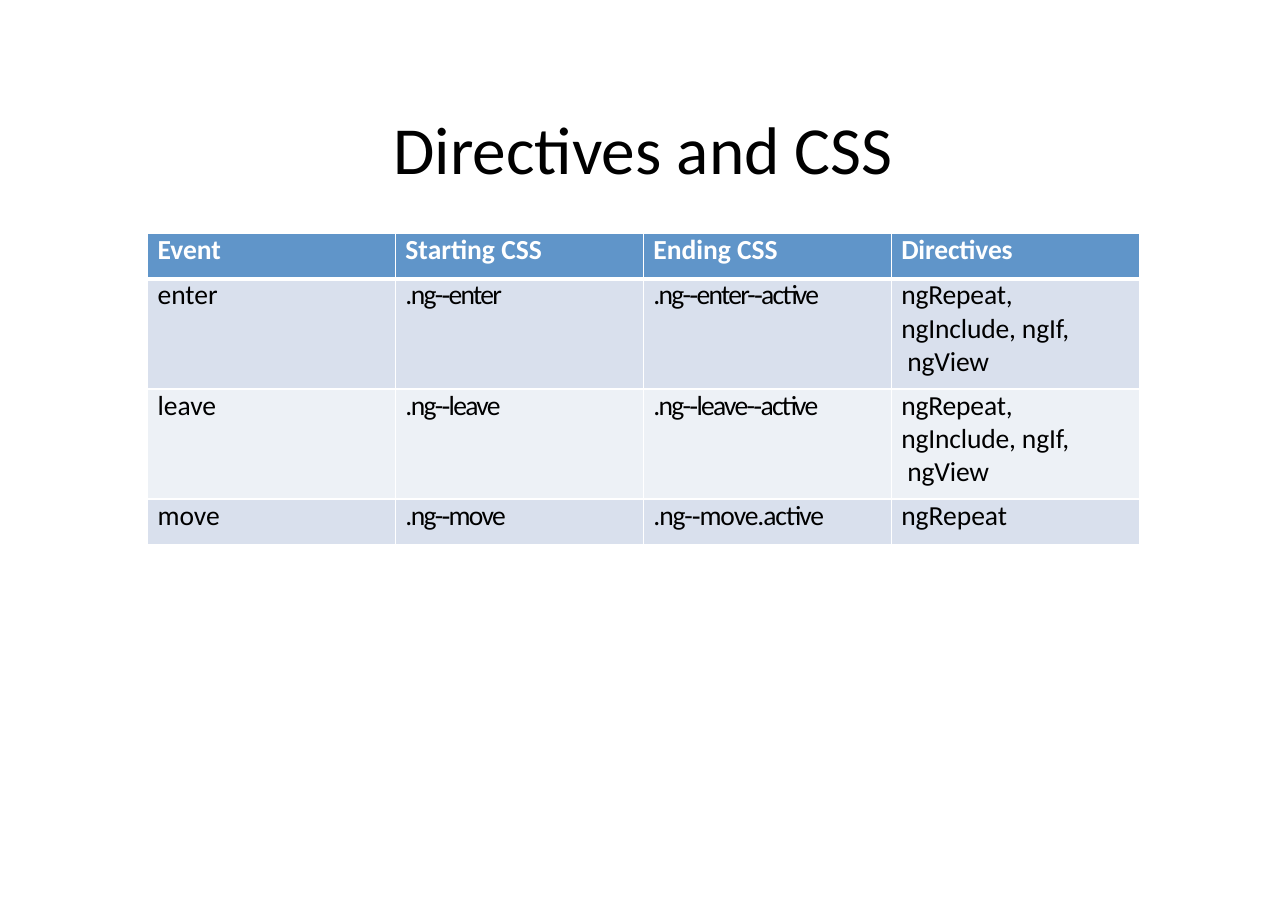
"""Build the slide on directives and their CSS classes."""
from lxml import etree
from pptx import Presentation, util as u
from pptx.dml.color import RGBColor
from pptx.oxml import ns

FONT = "Calibri"
BLACK, WHITE = "000000", "FFFFFF"
HEADER_FILL, BAND_FILLS = "6095C9", ("D9E0ED", "EDF1F6")
COLUMN_WIDTH = 2.25
ROW_HEIGHTS = (0.41, 1, 1, 0.41)
SPACE_BEFORE = (3.1, 2.1, 3.1, 3.1)
TIGHT = -1.1
ALL_DIRECTIVES = "ngRepeat,\vngInclude, ngIf,\v ngView"
HEADINGS = ("Event", "Starting CSS", "Ending CSS", "Directives")
EVENTS = (
    ("enter", ".ng-‐enter", ".ng-‐enter-‐active", ALL_DIRECTIVES),
    ("leave", ".ng-‐leave", ".ng-‐leave-‐active", ALL_DIRECTIVES),
    ("move", ".ng-‐move", ".ng-‐move.active", "ngRepeat"),
)


def colour(value):
    """Turn a hex string into a colour."""
    return RGBColor.from_string(value)


def write(frame, content, size=18, ink=BLACK, bold=False, indent=0.09,
          before=0, line=None, spacing=0):
    """Write one formatted paragraph into a text frame."""
    frame.word_wrap = True
    para = frame.paragraphs[0]
    para.text = content
    para.space_before = u.Pt(before)
    para.line_spacing = line
    para._p.get_or_add_pPr().set("marL", str(u.Inches(indent)))
    for span in para.runs:
        span.font.name = FONT
        span.font.size = u.Pt(size)
        span.font.bold = bold
        span.font.color.rgb = colour(ink)
        span._r.get_or_add_rPr().set("spc", str(round(spacing * 100)))


def add_title(page, content):
    """Add the slide title."""
    box = page.shapes.add_textbox(u.Inches(1.44), u.Inches(0.97),
                                  u.Inches(8.81), u.Inches(0.69))
    frame = box.text_frame
    frame.margin_left = frame.margin_right = 0
    frame.margin_top = frame.margin_bottom = 0
    write(frame, content, size=44, indent=2.13, spacing=-0.05)


def set_borders(cell, top=1, bottom=1):
    """Draw white borders of the given widths around a cell."""
    properties = cell._tc.get_or_add_tcPr()
    widths = {"lnL": 1, "lnR": 1, "lnT": top, "lnB": bottom}
    for place, (tag, width) in enumerate(widths.items()):
        edge = etree.Element(ns.qn(f"a:{tag}"), w=str(u.Pt(width)))
        fill = etree.SubElement(edge, ns.qn("a:solidFill"))
        etree.SubElement(fill, ns.qn("a:srgbClr"), val=WHITE)
        properties.insert(place, edge)


def fill_cell(cell, content, fill, top=1, bottom=1, **style):
    """Set the text, fill and borders of a cell."""
    cell.margin_left = cell.margin_right = 0
    cell.margin_top = cell.margin_bottom = 0
    write(cell.text_frame, content, **style)
    cell.fill.solid()
    cell.fill.fore_color.rgb = colour(fill)
    set_borders(cell, top, bottom)


def add_event_table(page):
    """Add the table of events, CSS classes and directives."""
    rows = (HEADINGS,) + EVENTS
    table = page.shapes.add_table(
        len(rows), len(HEADINGS), u.Inches(1.34), u.Inches(2.12),
        u.Inches(COLUMN_WIDTH * len(HEADINGS)),
        u.Inches(sum(ROW_HEIGHTS))).table
    table.horz_banding = False
    for column in table.columns:
        column.width = u.Inches(COLUMN_WIDTH)
    for number, contents in enumerate(rows):
        table.rows[number].height = u.Inches(ROW_HEIGHTS[number])
        header = number == 0
        fill = HEADER_FILL if header else BAND_FILLS[(number - 1) % 2]
        for index, content in enumerate(contents):
            spacing = TIGHT if content.startswith(".") else 0
            if content.endswith("move.active"):
                spacing = -0.7
            elif content in (ALL_DIRECTIVES, "Directives"):
                spacing = -0.1
            fill_cell(table.cell(number, index), content, fill,
                      top=3 if number == 1 else 1, bottom=3 if header else 1,
                      ink=WHITE if header else BLACK, bold=header,
                      before=SPACE_BEFORE[number], spacing=spacing,
                      line=0.99 if content == ALL_DIRECTIVES else None)


def main():
    """Build and save the deck."""
    deck = Presentation()
    deck.slide_width, deck.slide_height = u.Inches(11.69), u.Inches(8.26)
    page = deck.slides.add_slide(deck.slide_layouts[6])
    add_title(page, "Directives and CSS")
    add_event_table(page)
    deck.save("out.pptx")


if __name__ == "__main__":
    main()
